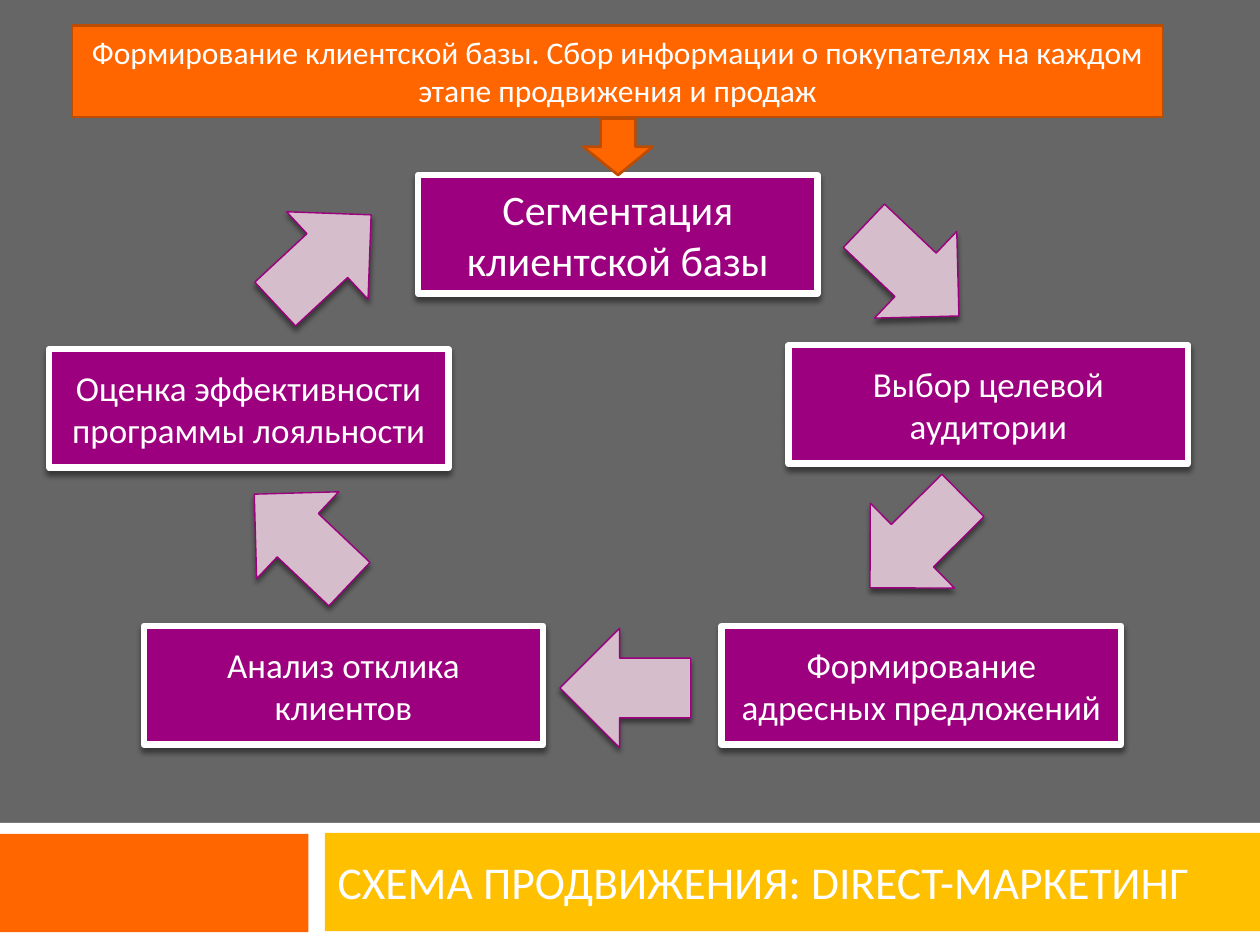
from lxml.etree import SubElement
from pptx import Presentation
from pptx.dml.color import RGBColor
from pptx.enum.shapes import MSO_SHAPE as Shape
from pptx.enum.text import MSO_ANCHOR as Anchor, PP_ALIGN as Align
from pptx.oxml.ns import qn
from pptx.util import Cm, Pt

GREY = RGBColor(0x66, 0x66, 0x66)
WHITE = RGBColor(0xFF, 0xFF, 0xFF)
ORANGE = RGBColor(0xFF, 0x66, 0x00)
RUST = RGBColor(0xBD, 0x4B, 0x00)
GOLD = RGBColor(0xFF, 0xC0, 0x00)
PURPLE = RGBColor(0x9C, 0x00, 0x7F)
PINK = RGBColor(0xD5, 0xBD, 0xCC)

BOX_SIZE = (8.05, 2.39)
ARROW_SIZE = (2.41, 2.64)

# Steps of the cycle, clockwise: text, left, top, font size
STEPS = [
    ("Сегментация клиентской базы", 8.43, 3.53, 24),
    ("Выбор целевой аудитории", 15.9, 6.96, 20),
    ("Формирование адресных предложений", 14.55, 12.62, 20),
    ("Анализ отклика клиентов", 2.9, 12.62, 20),
    ("Оценка эффективности программы лояльности", 0.99, 7.04, 20),
]
# Arrows between the steps: left, top, rotation
TURNS = [
    (17.17, 4.14, 313.5),
    (17.27, 9.6, 45.2),
    (11.4, 12.55, 90),
    (4.88, 9.55, 133.4),
    (5.31, 3.91, 227.1),
]


class Deck:
    def __init__(self, slide, font="Calibri"):
        self.slide = slide
        self.font = font
        fill = slide.background.fill
        fill.solid()
        fill.fore_color.rgb = GREY

    def shape(self, kind, area, fill, line=None, width=0):
        item = self.slide.shapes.add_shape(kind, *map(Cm, area))
        item.fill.solid()
        item.fill.fore_color.rgb = fill
        if line is None:
            item.line.fill.background()
        else:
            item.line.color.rgb = line
            item.line.width = Pt(width)
        item.shadow.inherit = False
        return item

    def shade(self, item):
        """Drop a soft black shadow straight below the item."""
        effects = item._element.spPr.find(qn("a:effectLst"))
        outer = SubElement(effects, qn("a:outerShdw"), blurRad=str(Pt(3)),
                           dist=str(Pt(2.4)), dir="5400000", rotWithShape="0")
        color = SubElement(outer, qn("a:srgbClr"), val="000000")
        SubElement(color, qn("a:alpha"), val="45000")

    def label(self, item, text, size, align=Align.CENTER):
        frame = item.text_frame
        frame.text = text
        frame.word_wrap = True
        frame.vertical_anchor = Anchor.MIDDLE
        line = frame.paragraphs[0]
        line.alignment = align
        font = line.runs[0].font
        font.name = self.font
        font.size = Pt(size)
        font.color.rgb = WHITE

    def title(self, text, area):
        item = self.slide.shapes.title
        item.left, item.top, item.width, item.height = map(Cm, area)
        self.label(item, text, 26, Align.LEFT)
        # Bring the title in front of the bands
        self.slide.shapes._spTree.append(item._element)

    def band(self, area, fill):
        self.shape(Shape.RECTANGLE, area, fill)

    def banner(self, text, area):
        item = self.shape(Shape.RECTANGLE, area, ORANGE, RUST, 1.5)
        self.label(item, text, 18)

    def step(self, text, left, top, size):
        area = (left, top, *BOX_SIZE)
        item = self.shape(Shape.RECTANGLE, area, PURPLE, WHITE, 3.75)
        self.shade(item)
        self.label(item, text, size)

    def turn(self, left, top, angle):
        area = (left, top, *ARROW_SIZE)
        item = self.shape(Shape.DOWN_ARROW, area, PINK, PURPLE, 0.79)
        item.rotation = angle
        self.shade(item)


def main():
    show = Presentation()
    show.slide_width, show.slide_height = Cm(25.4), Cm(19.05)
    deck = Deck(show.slides.add_slide(show.slide_layouts[5]))

    deck.band((0, 16.59, 25.4, 2.46), WHITE)
    deck.band((-0.03, 16.81, 6.25, 1.98), ORANGE)
    deck.band((6.55, 16.79, 18.85, 1.98), GOLD)
    deck.title("СХЕМА ПРОДВИЖЕНИЯ: DIRECT-МАРКЕТИНГ", (6.55, 16.81, 18.62, 1.9))

    deck.banner("Формирование клиентской базы. Сбор информации о покупателях "
                "на каждом этапе продвижения и продаж", (1.45, 0.51, 22, 1.85))
    for step in STEPS:
        deck.step(*step)
    for turn in TURNS:
        deck.turn(*turn)
    deck.shape(Shape.DOWN_ARROW, (11.76, 2.39, 1.4, 1.14), ORANGE, RUST, 1.5)

    show.save("out.pptx")


if __name__ == "__main__":
    main()
